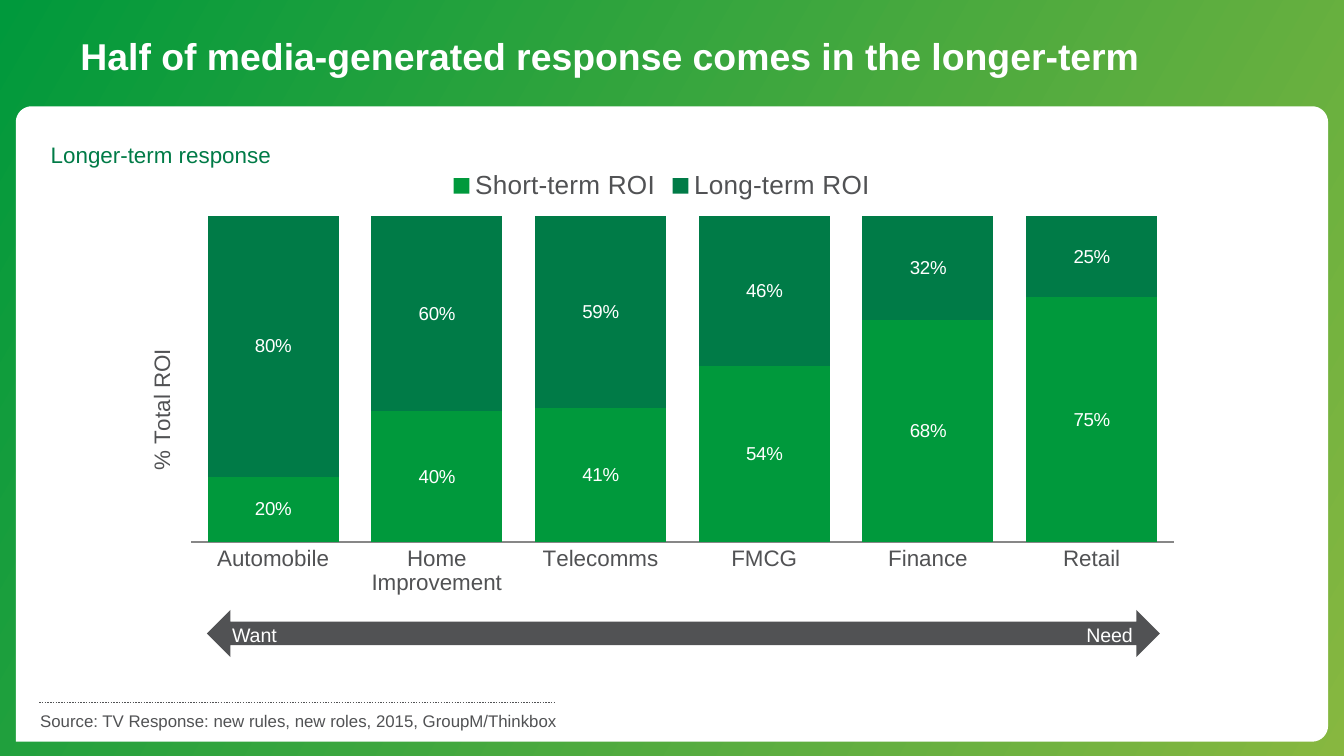
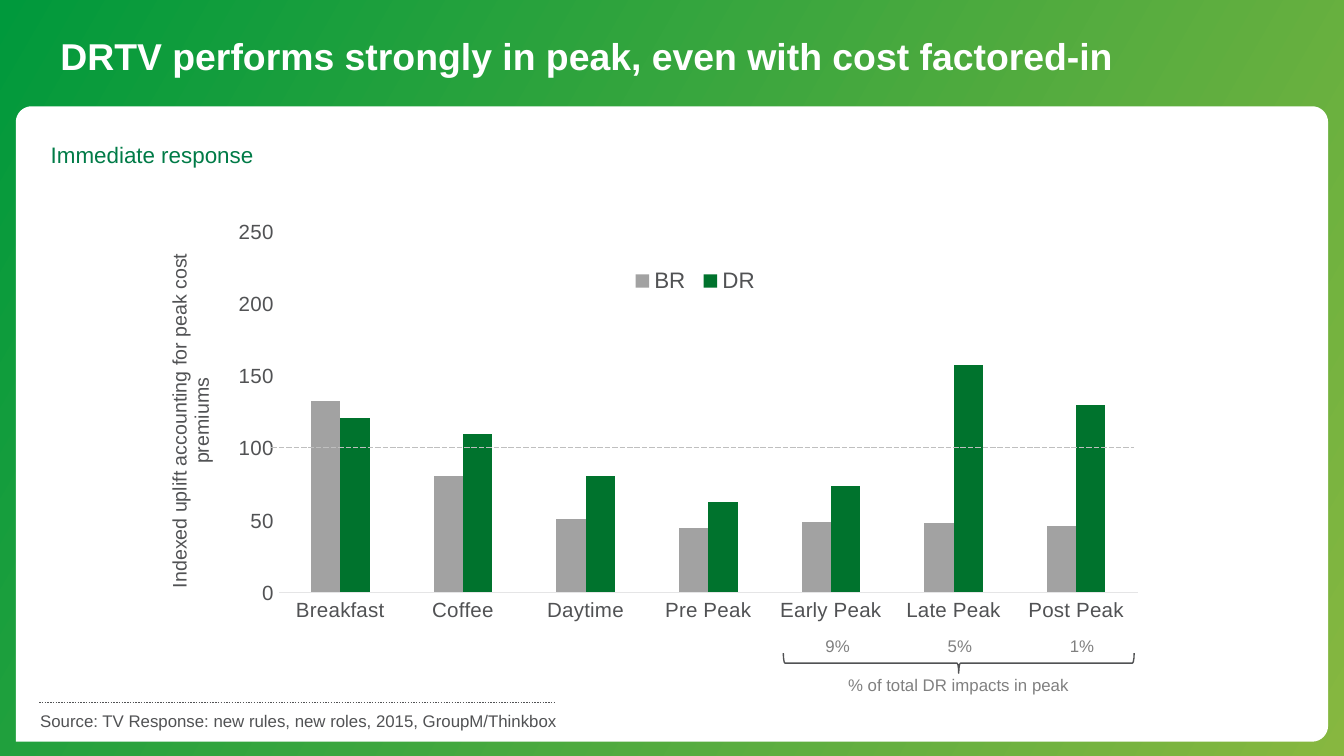
"""Build two slides on television response as editable charts."""
from math import cos, pi, sin

from lxml.etree import SubElement
from pptx import Presentation
from pptx.chart.data import CategoryChartData
from pptx.dml.color import RGBColor
from pptx.enum.chart import XL_CHART_TYPE, XL_LEGEND_POSITION, XL_TICK_MARK
from pptx.enum.dml import MSO_LINE
from pptx.enum.shapes import MSO_CONNECTOR, MSO_SHAPE
from pptx.enum.text import MSO_ANCHOR, PP_ALIGN
from pptx.oxml.ns import qn
from pptx.util import Cm, Pt

FONT = "Arial"
WHITE = "FFFFFF"
GREY = "515254"
GREEN = "00993C"
LIME = "87B740"
DEEP_GREEN = "007B47"
LABEL_GREY = "808080"
SLIDE_WIDTH, SLIDE_HEIGHT = 25.4, 14.29
SOURCE = "Source: TV Response: new rules, new roles, 2015, GroupM/Thinkbox"


def color(value):
    """Turn a hex string into a colour."""
    return RGBColor.from_string(value)


def lengths(box):
    """Turn centimetre values into lengths."""
    return [Cm(value) for value in box]


def style_font(font, size, hex_color, bold=False):
    """Apply the shared typeface with a size and colour."""
    font.name = FONT
    font.size = Pt(size)
    font.bold = bold
    font.color.rgb = color(hex_color)


def write_text(shape, text, size=9, hex_color=GREY, bold=False,
               align=PP_ALIGN.LEFT, anchor=MSO_ANCHOR.TOP, left_inset=0.25):
    """Write one formatted paragraph into a shape."""
    frame = shape.text_frame
    frame.word_wrap = True
    frame.vertical_anchor = anchor
    frame.margin_left = Cm(left_inset)
    paragraph = frame.paragraphs[0]
    paragraph.alignment = align
    run = paragraph.add_run()
    run.text = text
    style_font(run.font, size, hex_color, bold)


def add_text(slide, box, text, **text_format):
    """Add a text box."""
    write_text(slide.shapes.add_textbox(*lengths(box)), text, **text_format)


def add_centred_text(slide, box, text, **text_format):
    """Add a text box centred both ways."""
    add_text(slide, box, text, align=PP_ALIGN.CENTER,
             anchor=MSO_ANCHOR.MIDDLE, **text_format)


def add_rule(slide, left, right, top, hex_color, width, dash):
    """Add a dashed horizontal line."""
    rule = slide.shapes.add_connector(
        MSO_CONNECTOR.STRAIGHT, *lengths((left, top, right, top)))
    rule.line.color.rgb = color(hex_color)
    rule.line.width = Pt(width)
    rule.line.dash_style = dash
    SubElement(rule.element.find(qn("p:spPr")), qn("a:effectLst"))


def add_panel(slide):
    """Add the white panel with three rounded corners."""
    left, top, right, bottom, radius = 0.3, 2.01, 25.1, 14.02, 0.3
    corners = [(left + radius, top + radius, pi),
               (right - radius, top + radius, 1.5 * pi),
               (right - radius, bottom - radius, 0)]
    points = [(Cm(x + radius * cos(start + step * pi / 16)),
               Cm(y + radius * sin(start + step * pi / 16)))
              for x, y, start in corners for step in range(9)]
    builder = slide.shapes.build_freeform(Cm(left), Cm(bottom))
    builder.add_line_segments(points, close=True)
    panel = builder.convert_to_shape()
    panel.fill.solid()
    panel.fill.fore_color.rgb = color(WHITE)
    return panel


def decorate_layout(slide):
    """Place the gradient and panel on the layout behind its placeholders."""
    gradient = slide.shapes.add_shape(
        MSO_SHAPE.RECTANGLE, *lengths((0, 0, SLIDE_WIDTH, SLIDE_HEIGHT)))
    gradient.fill.gradient()
    gradient.fill.gradient_angle = 330
    for stop, position, hex_color in zip(gradient.fill.gradient_stops, (0, 1), (GREEN, LIME)):
        stop.position = position
        stop.color.rgb = color(hex_color)
    layout = slide.slide_layout
    for placeholder in list(layout.placeholders):
        if placeholder.top > Cm(SLIDE_HEIGHT):
            placeholder.element.getparent().remove(placeholder.element)
    for index, shape in enumerate((gradient, add_panel(slide))):
        shape.line.fill.background()
        shape.shadow.inherit = False
        layout.shapes.element.insert(2 + index, shape.element)


def add_frame(slide, title, title_left, title_width, subtitle):
    """Fill the title, subtitle and source line."""
    placeholder = slide.shapes.title
    placeholder.left, placeholder.top, placeholder.width, placeholder.height = lengths(
        (title_left, 0.05, title_width, 2.01))
    write_text(placeholder, title, size=20, hex_color=WHITE, bold=True,
               anchor=MSO_ANCHOR.MIDDLE)
    add_text(slide, (0.71, 2.54, 5.79, 0.76), subtitle, size=12, hex_color=DEEP_GREEN)
    add_text(slide, (0.51, 13.31, 13.87, 0.64), SOURCE)
    add_rule(slide, 0.74, 10.49, 13.28, GREY, 0.75, MSO_LINE.ROUND_DOT)


def set_layout(chart, query, index, inner=False, **position):
    """Give a chart part a manual layout in fractions of the chart."""
    parent = chart.element.xpath(query)[0]
    for old_layout in parent.findall(qn("c:layout")):
        parent.remove(old_layout)
    layout = SubElement(parent, qn("c:layout"))
    parent.insert(index, layout)
    manual = SubElement(layout, qn("c:manualLayout"))
    values = {"layoutTarget": "inner"} if inner else {}
    values.update(xMode="edge", yMode="edge", **position)
    for name, value in values.items():
        SubElement(manual, qn(f"c:{name}")).set("val", str(value))


def add_column_chart(slide, kind, box, categories, series_rows, plot_area, gap, overlap,
                     category_size, legend_size, axis_line, number_format="General"):
    """Add a column chart with a legend on top."""
    data = CategoryChartData(number_format=number_format)
    data.categories = categories
    for name, values, _ in series_rows:
        data.add_series(name, values)
    chart = slide.shapes.add_chart(kind, *lengths(box), data).chart
    chart.has_title = False
    style_font(chart.font, 10, GREY)
    chart.has_legend = True
    chart.legend.position = XL_LEGEND_POSITION.TOP
    chart.legend.include_in_layout = False
    style_font(chart.legend.font, legend_size, GREY)
    plot = chart.plots[0]
    plot.gap_width, plot.overlap = gap, overlap
    plot.vary_by_categories = False
    for series, (_, _, hex_color) in zip(plot.series, series_rows):
        series.invert_if_negative = False
        series.format.fill.solid()
        series.format.fill.fore_color.rgb = color(hex_color)
    axis = chart.category_axis
    axis.major_tick_mark = XL_TICK_MARK.NONE
    axis.format.line.color.rgb = color(axis_line)
    axis.format.line.width = Pt(0.75)
    style_font(axis.tick_labels.font, category_size, GREY)
    chart.value_axis.has_major_gridlines = False
    chart.value_axis.major_tick_mark = XL_TICK_MARK.NONE
    set_layout(chart, ".//c:plotArea", 0, inner=True, **plot_area)
    return chart


def add_axis_title(chart, text, size, **position):
    """Add a vertical title to the value axis."""
    frame = chart.value_axis.axis_title.text_frame
    frame.text = text
    style_font(frame.paragraphs[0].runs[0].font, size, GREY)
    body = chart.element.xpath(".//c:valAx/c:title//a:bodyPr")[0]
    body.set("rot", "-5400000")
    body.set("vert", "horz")
    set_layout(chart, ".//c:valAx/c:title", 1, **position)


def add_sector_chart(slide):
    """Add the stacked chart of short and long-term return."""
    chart = add_column_chart(
        slide, XL_CHART_TYPE.COLUMN_STACKED_100, (2.31, 2.95, 20.4, 8.92),
        ["Automobile", "Home Improvement", "Telecomms", "FMCG", "Finance", "Retail"],
        [("Short-term ROI", (0.2, 0.4, 0.41, 0.54, 0.68, 0.75), GREEN),
         ("Long-term ROI", (0.8, 0.6, 0.59, 0.46, 0.32, 0.25), DEEP_GREEN)],
        {"x": 0.064, "y": 0.127, "w": 0.91, "h": 0.691}, gap=25, overlap=100,
        category_size=12, legend_size=14, axis_line="878787", number_format="0%")
    for series in chart.plots[0].series:
        labels = series.data_labels
        labels.show_value = True
        labels.number_format = "0%"
        labels.number_format_is_linked = False
        style_font(labels.font, 10, WHITE)
    chart.value_axis.major_unit = 0.2
    chart.value_axis.visible = False
    add_axis_title(chart, "% Total ROI", 12, x=0.02, y=0.4)


def add_daypart_chart(slide):
    """Add the clustered chart of uplift by time of day."""
    chart = add_column_chart(
        slide, XL_CHART_TYPE.COLUMN_CLUSTERED, (2.69, 3.56, 19, 8.99),
        ["Breakfast", "Coffee", "Daytime", "Pre Peak", "Early Peak", "Late Peak", "Post Peak"],
        [("BR", (133, 81, 51, 45, 49, 48, 46), "A2A2A2"),
         ("DR", (121, 110, 81, 63, 74, 158, 130), "00732D")],
        {"x": 0.136, "y": 0.092, "w": 0.854, "h": 0.758}, gap=219, overlap=0,
        category_size=11, legend_size=12, axis_line="E5E5E6")
    axis = chart.value_axis
    axis.minimum_scale, axis.maximum_scale, axis.major_unit = 0, 250, 50
    axis.format.line.fill.background()
    style_font(axis.tick_labels.font, 11, GREY)
    add_axis_title(chart, "Indexed uplift accounting for peak cost premiums", 10.5,
                   x=0.02, y=0.13)
    set_layout(chart, ".//c:legend", 1, x=0.48, y=0.15, w=0.14, h=0.09)


def add_want_need_arrow(slide):
    """Add the scale from want to need."""
    arrow = slide.shapes.add_shape(
        MSO_SHAPE.LEFT_RIGHT_ARROW, *lengths((3.91, 11.53, 18.01, 0.89)))
    arrow.shadow.inherit = False
    arrow.fill.solid()
    arrow.fill.fore_color.rgb = color(GREY)
    arrow.line.fill.background()
    for left, text in ((3.86, "Want"), (20.02, "Need")):
        add_centred_text(slide, (left, 11.79, 1.9, 0.43), text, size=10.5, hex_color=WHITE)


def add_peak_shares(slide):
    """Add the peak shares and the brace below them."""
    for index, share in enumerate(("9%", "5%", "1%")):
        add_centred_text(slide, (15.09 + 2.31 * index, 11.96, 1.73, 0.51), share,
                         hex_color=LABEL_GREY, left_inset=0)
    add_centred_text(slide, (15.57, 12.73, 5.33, 0.43), "% of total DR impacts in peak",
                     hex_color=LABEL_GREY, left_inset=0)
    brace = slide.shapes.add_shape(MSO_SHAPE.LEFT_BRACE, *lengths((17.93, 9.22, 0.38, 6.63)))
    brace.rotation = 270
    brace.shadow.inherit = False
    brace.fill.background()
    brace.line.color.rgb = color(GREY)
    brace.line.width = Pt(0.75)


def main():
    """Build and save the presentation."""
    presentation = Presentation()
    presentation.slide_width, presentation.slide_height = lengths((SLIDE_WIDTH, SLIDE_HEIGHT))
    title_only = presentation.slide_layouts[5]

    sector_slide = presentation.slides.add_slide(title_only)
    decorate_layout(sector_slide)
    add_frame(sector_slide, "Half of media-generated response comes in the longer-term",
              1.27, 21.03, "Longer-term response")
    add_sector_chart(sector_slide)
    add_want_need_arrow(sector_slide)

    daypart_slide = presentation.slides.add_slide(title_only)
    add_frame(daypart_slide, "DRTV performs strongly in peak, even with cost factored-in",
              0.89, 22, "Immediate response")
    add_daypart_chart(daypart_slide)
    add_rule(daypart_slide, 5.13, 21.44, 8.46, "BFBFBF", 1, MSO_LINE.SQUARE_DOT)
    add_peak_shares(daypart_slide)

    presentation.save("out.pptx")


if __name__ == "__main__":
    main()
